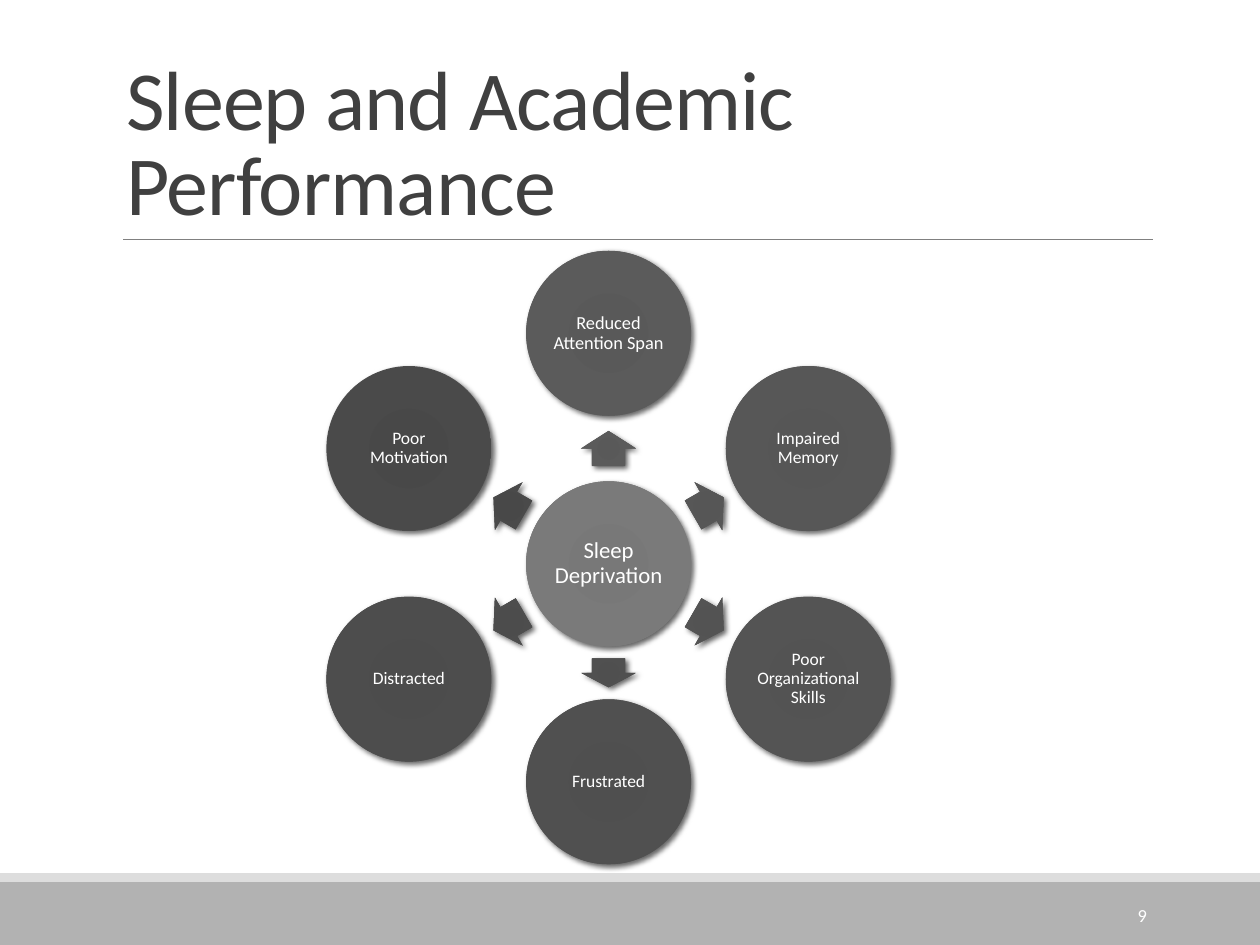
import math

import pptx
import pptx.dml.color
import pptx.enum.shapes
import pptx.enum.text
import pptx.oxml
import pptx.oxml.ns
import pptx.util

Inches = pptx.util.Inches
Pt = pptx.util.Pt
SHAPES = pptx.enum.shapes.MSO_SHAPE
ALIGN = pptx.enum.text.PP_ALIGN
ANCHOR = pptx.enum.text.MSO_ANCHOR

WIDTH, HEIGHT = 10, 7.5
HUB_X, HUB_Y = 4.83, 4.475
CIRCLE = 1.31
RADIUS, SHORT_RADIUS = 1.83, 1.73
STOPS = (0, 34, 70, 100)
HUB_GREYS = ("77", "78", "7A", "80")

# Label, text size, direction in degrees clockwise from the right, grey levels
SPOKES = [
    ("Reduced Attention Span", 10.5, 270, ("59", "59", "5B", "5F")),
    ("Impaired Memory", 10, 330, ("55", "56", "57", "5B")),
    ("Poor Organizational Skills", 10, 30, ("52", "53", "54", "58")),
    ("Frustrated", 10, 90, ("4E", "4F", "50", "54")),
    ("Distracted", 10, 150, ("4B", "4C", "4D", "51")),
    ("Poor Motivation", 10, 210, ("48", "48", "4A", "4D")),
]


def color(value):
    return pptx.dml.color.RGBColor.from_string(value)


def drawing_xml(text):
    return pptx.oxml.parse_xml(text.replace(">", " " + pptx.oxml.ns.nsdecls("a") + ">", 1))


def write(box, text, size, tint, align, anchor, spacing=1.0):
    frame = box.text_frame
    frame.word_wrap = True
    frame.auto_size = pptx.enum.text.MSO_AUTO_SIZE.NONE
    frame.vertical_anchor = anchor
    frame.text = text
    para = frame.paragraphs[0]
    para.alignment = align
    para.line_spacing = spacing
    span = para.runs[0]
    span.font.name = "Calibri"
    span.font.size = Pt(size)
    span.font.color.rgb = color(tint)
    return span


def add_band(page, top, height, tint):
    band = page.shapes.add_shape(
        SHAPES.RECTANGLE, 0, Inches(top), Inches(WIDTH), Inches(height))
    band.shadow.inherit = False
    band.fill.solid()
    band.fill.fore_color.rgb = color(tint)
    band.line.fill.background()


def add_rule(page, left, right, top):
    rule = page.shapes.add_connector(
        pptx.enum.shapes.MSO_CONNECTOR.STRAIGHT,
        Inches(left), Inches(top), Inches(right), Inches(top))
    rule.line.color.rgb = color("808080")
    rule.line.width = Pt(0.5)
    rule._element.spPr.append(drawing_xml("<a:effectLst></a:effectLst>"))


def add_shaded(page, kind, center_x, center_y, width, height, greys):
    """Add a borderless shape with a radial grey gradient and a soft shadow."""
    shape = page.shapes.add_shape(
        kind, Inches(center_x - width / 2), Inches(center_y - height / 2),
        Inches(width), Inches(height))
    shape.line.fill.background()
    stops = "".join(
        f'<a:gs pos="{stop * 1000}"><a:srgbClr val="{grey * 3}"/></a:gs>'
        for stop, grey in zip(STOPS, greys))
    properties = shape._element.spPr
    properties.prstGeom.addnext(drawing_xml(
        f'<a:gradFill><a:gsLst>{stops}</a:gsLst><a:path path="circle">'
        '<a:fillToRect l="100000" t="100000" r="100000" b="100000"/>'
        '</a:path></a:gradFill>'))
    properties.append(drawing_xml(
        f'<a:effectLst><a:outerShdw blurRad="{Pt(3)}" dist="{Pt(2)}" dir="2700000">'
        '<a:srgbClr val="000000"><a:alpha val="60000"/></a:srgbClr>'
        '</a:outerShdw></a:effectLst>'))
    return shape


def add_circle(page, center_x, center_y, text, size, greys):
    circle = add_shaded(page, SHAPES.OVAL, center_x, center_y, CIRCLE, CIRCLE, greys)
    frame = circle.text_frame
    frame.margin_left = frame.margin_right = Inches(0.01)
    frame.margin_top = frame.margin_bottom = Inches(0.01)
    write(circle, text, size, "FFFFFF", ALIGN.CENTER, ANCHOR.MIDDLE, 0.9)


def add_spoke(page, text, size, angle, greys):
    """Add an arrow leaving the hub and the circle it points to."""
    downward = angle == 90
    radius = SHORT_RADIUS if downward else RADIUS
    across = radius * math.cos(math.radians(angle))
    down = radius * math.sin(math.radians(angle))
    arrow = add_shaded(
        page, SHAPES.RIGHT_ARROW, HUB_X + across / 2, HUB_Y + down / 2,
        0.23 if downward else 0.28, 0.44, greys)
    arrow.adjustments[0] = 0.6
    arrow.adjustments[1] = 0.5
    arrow.rotation = angle
    add_circle(page, HUB_X + across, HUB_Y + down, text, size, greys)


def add_title(page, text):
    title = page.shapes.title
    title.left, title.top = Inches(0.9), Inches(0.31)
    title.width, title.height = Inches(8.25), Inches(1.59)
    span = write(title, text, 48, "404040", ALIGN.LEFT, ANCHOR.BOTTOM, 0.85)
    span.font._element.set("spc", "-50")


def add_page_number(page, number):
    box = page.shapes.add_textbox(Inches(8.12), Inches(7.06), Inches(1.08), Inches(0.4))
    write(box, number, 10.5, "FFFFFF", ALIGN.RIGHT, ANCHOR.MIDDLE)


def main():
    deck = pptx.Presentation()
    deck.slide_width, deck.slide_height = Inches(WIDTH), Inches(HEIGHT)
    page = deck.slides.add_slide(deck.slide_layouts[5])
    add_band(page, 7, 0.5, "B2B2B2")
    add_band(page, 6.93, 0.07, "DDDDDD")
    add_rule(page, 0.98, 9.15, 1.9)
    add_title(page, "Sleep and Academic Performance")
    add_circle(page, HUB_X, HUB_Y, "Sleep Deprivation", 13, HUB_GREYS)
    for spoke in SPOKES:
        add_spoke(page, *spoke)
    add_page_number(page, "9")
    deck.save("out.pptx")


if __name__ == "__main__":
    main()
